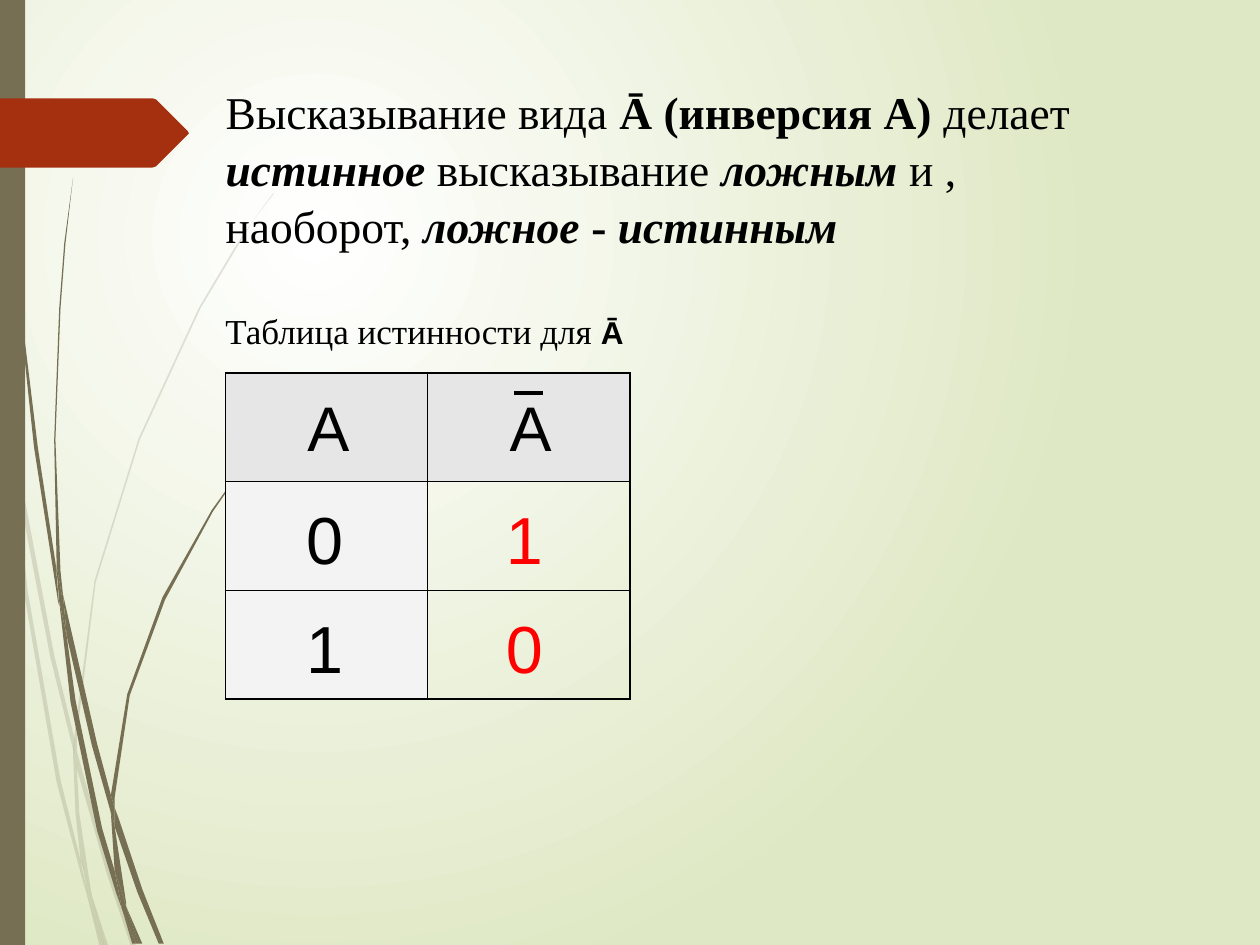
import pptx
import pptx.dml.color
import pptx.enum.shapes
import pptx.enum.text
import pptx.oxml
import pptx.oxml.ns
import pptx.util

RGB = pptx.dml.color.RGBColor
OLIVE = RGB(0x76, 0x6F, 0x54)
RUST = RGB(0xA5, 0x30, 0x10)
BLACK = RGB(0, 0, 0)
RED = RGB(0xFF, 0, 0)
HEADER_GREY = RGB(0xE6, 0xE6, 0xE6)
PALE_GREY = RGB(0xF3, 0xF3, 0xF3)
WHITE = RGB(0xFF, 0xFF, 0xFF)
MEADOW = RGB(0xDF, 0xE8, 0xC4)

COLUMNS, ROWS = 1000, 750
UNIT = pptx.util.Inches(10) // COLUMNS

SERIF = {"name": "Times New Roman", "size": pptx.util.Pt(26), "bold": False, "italic": False}
BOLD = {"bold": True}
BOLD_ITALIC = {"bold": True, "italic": True}
CAPTION = {"size": pptx.util.Pt(20)}
CAPTION_SYMBOL = {"name": "Arial", "size": pptx.util.Pt(18), "bold": True}
HEADING = {"name": "Arial", "size": pptx.util.Pt(36), "bold": False}
DIGIT = {"name": "Arial", "size": pptx.util.Pt(38), "bold": False}

# Outlines of the grass blades, as (column, row) corners
PALE_BLADES = [
    [(8, 350), (6, 322), (0, 282), (0, 299), (7, 344)],
    [(40, 522), (59, 599), (59, 586), (43, 520), (10, 345), (12, 376)],
    [(64, 607), (61, 596), (61, 610), (85, 694), (104, 751), (108, 751), (88, 692)],
    [(83, 751), (86, 751), (73, 711)],
    [(64, 683), (48, 619), (22, 469), (12, 376), (8, 350), (19, 470), (45, 621),
     (64, 693), (70, 714), (69, 707)],
    [(58, 599), (60, 646), (64, 683), (67, 692), (73, 711), (72, 706), (63, 646),
     (61, 610), (61, 608)],
    [(61, 584), (76, 462), (111, 349), (159, 245), (187, 198), (201, 175), (217, 154),
     (217, 153), (201, 175), (186, 197), (158, 244), (110, 348), (75, 461), (59, 584),
     (59, 586), (61, 596)],
    [(70, 714), (79, 751), (82, 751)],
    [(61, 608), (61, 610), (61, 596), (59, 586), (58, 599)],
    [(67, 692), (65, 683), (69, 707), (70, 714), (82, 751), (83, 751), (73, 711)],
]
DARK_BLADES = [
    [(5, 110), (14, 233), (27, 355), (46, 477), (47, 481), (45, 457), (45, 453),
     (30, 355), (15, 232), (6, 109), (4, 48), (3, 0), (2, 0), (3, 48)],
    [(73, 592), (88, 645), (88, 633), (88, 631), (77, 590), (50, 472), (53, 505)],
    [(94, 649), (91, 641), (91, 656), (109, 708), (126, 749), (130, 749), (113, 706)],
    [(91, 691), (81, 657), (60, 556), (53, 505), (47, 477), (56, 557), (77, 659),
     (92, 708), (97, 722), (96, 717)],
    [(50, 472), (48, 453), (44, 349), (48, 245), (52, 193), (58, 141), (51, 193),
     (47, 245), (43, 349), (45, 449), (49, 472)],
    [(110, 749), (113, 749), (100, 719)],
    [(47, 477), (53, 505), (50, 472), (49, 472), (45, 449), (45, 453)],
    [(91, 633), (103, 552), (131, 476), (169, 406), (191, 374), (203, 359), (216, 344),
     (215, 344), (203, 358), (191, 373), (168, 405), (129, 474), (101, 551), (88, 631),
     (91, 641)],
    [(97, 722), (105, 749), (108, 749)],
    [(88, 645), (91, 691), (96, 706), (100, 719), (100, 716), (91, 656), (90, 651)],
    [(88, 645), (90, 651), (91, 656), (91, 641), (88, 631), (88, 633)],
    [(96, 706), (91, 691), (96, 717), (97, 722), (108, 749), (110, 749), (100, 719)],
]
PENNANT = [(0, 78), (121, 78), (124, 79), (149, 104), (149.5, 105.5), (149, 107),
           (124, 132), (121, 133), (0, 133)]


def apply(target, values):
    for name, value in values.items():
        setattr(target, name, value)


def units(*lengths):
    return [pptx.util.Emu(round(length * UNIT)) for length in lengths]


def xml(tag, rest):
    """Make an element from its tag and the rest of its markup."""
    return pptx.oxml.parse_xml(f'<{tag} {pptx.oxml.ns.nsdecls("a", "p")} {rest}')


class SlideBuilder:
    """Draws on one slide; lengths are columns and rows of the grid."""

    def __init__(self):
        self.deck = pptx.Presentation()
        self.deck.slide_width, self.deck.slide_height = units(COLUMNS, ROWS)
        self.page = self.deck.slides.add_slide(self.deck.slide_layouts[5])

    def background(self, inner, outer):
        stops = "".join(f'<a:gs pos="{pos}"><a:srgbClr val="{color}"/></a:gs>'
                        for pos, color in ((0, inner), (100000, outer)))
        self.page.element.cSld.insert(0, xml(
            "p:bg", f'><p:bgPr><a:gradFill rotWithShape="1"><a:gsLst>{stops}</a:gsLst>'
            '<a:path path="circle"><a:fillToRect l="50000" t="50000" r="100000" b="100000"/>'
            '</a:path></a:gradFill><a:effectLst/></p:bgPr></p:bg>'))

    def paint(self, shape, color, opacity=100):
        shape.shadow.inherit = False
        shape.line.fill.background()
        shape.fill.solid()
        shape.fill.fore_color.rgb = color
        if opacity < 100:
            tint = shape.element.spPr.find(".//" + pptx.oxml.ns.qn("a:srgbClr"))
            tint.append(xml("a:alpha", f'val="{opacity * 1000}"/>'))

    def outline(self, shapes, points, color, opacity=100):
        builder = shapes.build_freeform(*points[0], scale=UNIT)
        builder.add_line_segments(points[1:], close=True)
        self.paint(builder.convert_to_shape(), color, opacity)

    def grass(self, blades, opacity):
        group = self.page.shapes.add_group_shape()
        for blade in blades:
            self.outline(group.shapes, blade, OLIVE, opacity)

    def bar(self, place, color):
        kind = pptx.enum.shapes.MSO_SHAPE.RECTANGLE
        self.paint(self.page.shapes.add_shape(kind, *units(*place)), color)

    def add_spans(self, para, spans, base, color=BLACK):
        for text, style in spans:
            span = para.add_run()
            span.text = text
            apply(span.font, base | style)
            span.font.color.rgb = color
        para.alignment = pptx.enum.text.PP_ALIGN.LEFT

    def fill_box(self, box, place, spans):
        apply(box, dict(zip(("left", "top", "width", "height"), units(*place))))
        apply(box.text_frame, {"word_wrap": True,
                               "auto_size": pptx.enum.text.MSO_AUTO_SIZE.NONE,
                               "vertical_anchor": pptx.enum.text.MSO_ANCHOR.TOP})
        self.add_spans(box.text_frame.paragraphs[0], spans, SERIF)

    def title(self, place, spans):
        box = self.page.shapes.title
        self.page.shapes.element.append(box.element)  # in front of the grass
        self.fill_box(box, place, spans)
        box.text_frame.paragraphs[0].line_spacing = 1.04

    def text(self, place, spans):
        self.fill_box(self.page.shapes.add_textbox(*units(*place)), place, spans)

    def line(self, start, end, width):
        kind = pptx.enum.shapes.MSO_CONNECTOR.STRAIGHT
        line = self.page.shapes.add_connector(kind, *units(*start, *end))
        line.line.color.rgb = BLACK
        line.line.width = pptx.util.Pt(width)
        line.element.spPr.append(xml("a:effectLst", "/>"))

    def cell(self, cell, text, style, color, fill, indent, drop):
        left, top = units(indent, drop)
        apply(cell, {"margin_left": left, "margin_right": 0, "margin_top": top,
                     "margin_bottom": 0,
                     "vertical_anchor": pptx.enum.text.MSO_ANCHOR.MIDDLE})
        self.add_spans(cell.text_frame.paragraphs[0], [(text, {})], style, color)
        if fill is None:
            cell.fill.background()
        else:
            cell.fill.solid()
            cell.fill.fore_color.rgb = fill
        for index, side in enumerate("LRTB"):
            cell._tc.tcPr.insert(index, xml(
                f"a:ln{side}", f'w="12700"><a:solidFill><a:srgbClr val="{BLACK}"/>'
                f'</a:solidFill></a:ln{side}>'))

    def truth_table(self, place, rows):
        frame = self.page.shapes.add_table(len(rows), len(rows[0]), *units(*place))
        table = frame.table
        apply(table, {"first_row": False, "horz_banding": False})
        for r, values in enumerate(rows):
            for c, value in enumerate(values):
                if r == 0:
                    look = (HEADING, BLACK, HEADER_GREY, 65, 4)
                elif c == 0:
                    look = (DIGIT, BLACK, PALE_GREY, 64, 9)
                else:
                    look = (DIGIT, RED, None, 62, 9)
                self.cell(table.cell(r, c), value, *look)


def main():
    slide = SlideBuilder()
    slide.background(WHITE, MEADOW)
    slide.grass(PALE_BLADES, 20)
    slide.grass(DARK_BLADES, 100)
    slide.bar((0, 0, 20, ROWS), OLIVE)
    slide.outline(slide.page.shapes, PENNANT, RUST)
    slide.title((169, 60, 732, 140), [
        ("Высказывание вида ", {}), ("Ā (инверсия А)", BOLD), (" делает ", {}),
        ("истинное", BOLD_ITALIC), (" высказывание ", {}), ("ложным", BOLD_ITALIC),
        (" и , наоборот, ", {}), ("ложное", BOLD_ITALIC), (" - ", BOLD),
        ("истинным", BOLD_ITALIC)])
    slide.truth_table((179, 296, 321, 259), [("А", "А"), ("0", "1"), ("1", "0")])
    slide.line((408, 312), (431, 312), 2.25)
    slide.text((169, 241, 480, 43), [
        ("Таблица истинности для ", CAPTION), ("Ā", CAPTION_SYMBOL)])
    slide.deck.save("out.pptx")


if __name__ == "__main__":
    main()
